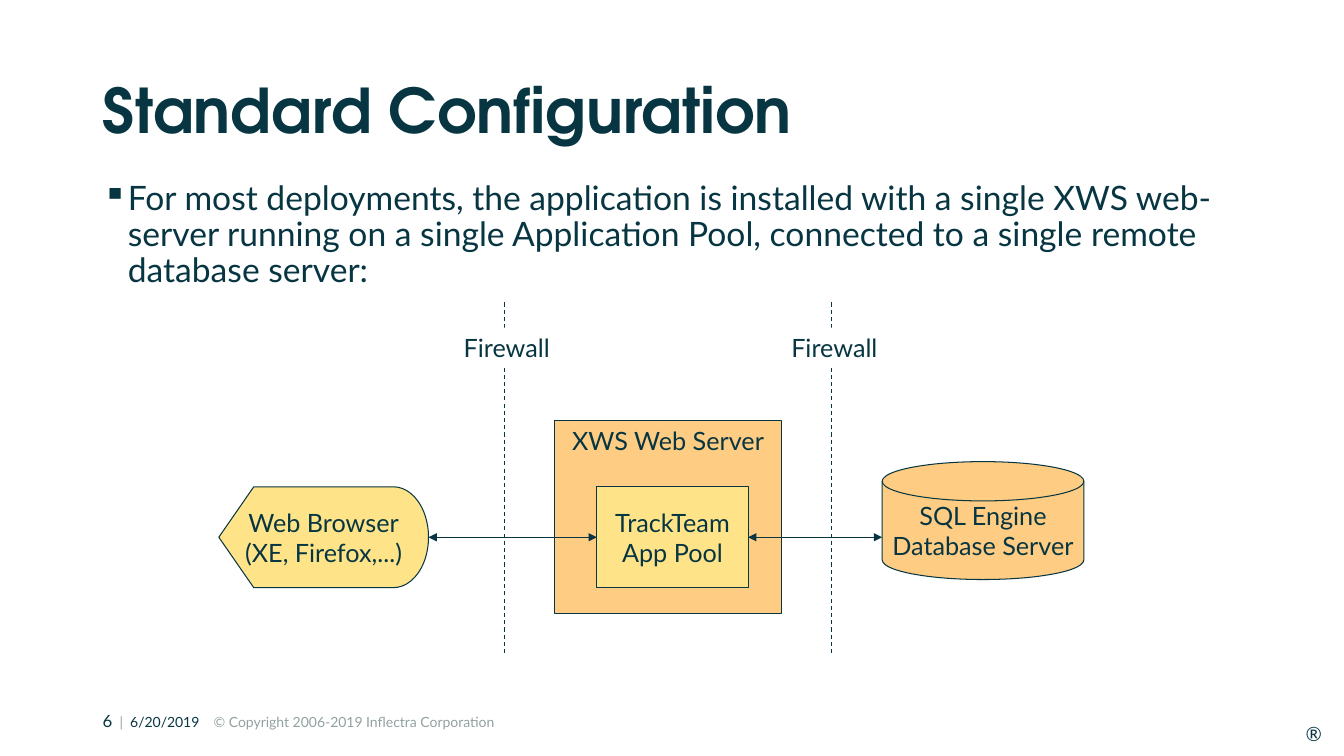
from dataclasses import dataclass
from typing import Any

from lxml import etree
from pptx import Presentation
from pptx.dml.color import RGBColor
from pptx.enum import dml, shapes, text
from pptx.oxml.ns import qn
from pptx.util import Inches, Pt

COLORS = {"ink": "073642", "grey": "93A1A1", "orange": "FECC82",
          "yellow": "FFE389", "white": "FFFFFF"}
BODY_FONT, TITLE_FONT = "Lato", "TeX Gyre Adventor"
SHAPE = shapes.MSO_SHAPE
ANCHOR, ALIGN = text.MSO_ANCHOR, text.PP_ALIGN
FLOW_Y = 5.33


@dataclass
class Node:
    kind: Any
    box: tuple[float, float, float, float]
    fill: str
    lines: list[str]
    anchor: Any = ANCHOR.MIDDLE


@dataclass
class Line:
    start: tuple[float, float]
    end: tuple[float, float]
    dashed: bool = False


NODES = [
    Node(SHAPE.FLOWCHART_MAGNETIC_DISK, (8.75, 4.58, 2, 1.17), "orange",
         ["SQL Engine", "Database Server"]),
    Node(SHAPE.FLOWCHART_PROCESS, (5.5, 4.17, 2.25, 1.92), "orange",
         ["XWS Web Server"], ANCHOR.TOP),
    Node(SHAPE.RECTANGLE, (5.92, 4.83, 1.5, 1), "yellow", ["TrackTeam", "App Pool"]),
    Node(SHAPE.FLOWCHART_DISPLAY, (2.17, 4.83, 2.08, 1), "yellow",
         ["Web Browser", "(XE, Firefox,...)"]),
]
# x of each dashed line, x of its label
FIREWALLS = [(8.25, 7.75), (5, 4.5)]
ARROWS = [Line((4.25, FLOW_Y), (5.92, FLOW_Y)), Line((7.42, FLOW_Y), (8.75, FLOW_Y))]


def set_all(target: Any, values: dict[str, Any]) -> None:
    for name, value in values.items():
        setattr(target, name, value)


def rgb(name: str) -> RGBColor:
    return RGBColor.from_string(COLORS[name])


def inches(box: tuple[float, ...]) -> list[int]:
    return [Inches(v) for v in box]


def add_run(p: Any, words: str, size: float, color: str = "ink",
            font: str = BODY_FONT, bold: bool = False) -> None:
    r = p.add_run()
    r.text = words
    set_all(r.font, {"name": font, "size": Pt(size), "bold": bold})
    r.font.color.rgb = rgb(color)


def add_text_box(s: Any, box: tuple[float, ...], margins: bool = True) -> Any:
    tf = s.shapes.add_textbox(*inches(box)).text_frame
    tf.word_wrap = True
    if not margins:
        set_all(tf, dict.fromkeys(
            ("margin_left", "margin_right", "margin_top", "margin_bottom"), 0))
    return tf.paragraphs[0]


def add_title(s: Any, words: str) -> None:
    sp = s.shapes.title
    set_all(sp, dict(zip(("left", "top", "width", "height"),
                         inches((0.92, 0.4, 11.5, 1.45)))))
    set_all(sp.text_frame, {"vertical_anchor": ANCHOR.MIDDLE, "word_wrap": True})
    p = sp.text_frame.paragraphs[0]
    set_all(p, {"alignment": ALIGN.LEFT, "line_spacing": 0.9})
    add_run(p, words, 44, font=TITLE_FONT, bold=True)


def add_bullet(s: Any, words: str) -> None:
    p = add_text_box(s, (0.92, 1.75, 11.5, 5.01))
    p.line_spacing = 0.9
    pPr = p._p.get_or_add_pPr()
    pPr.set("marL", str(Inches(0.25)))
    pPr.set("indent", str(Inches(-0.25)))
    etree.SubElement(pPr, qn("a:buChar"), char="▪")
    add_run(p, words, 24)


def add_node(s: Any, node: Node) -> None:
    sp = s.shapes.add_shape(node.kind, *inches(node.box))
    sp.shadow.inherit = False
    sp.fill.solid()
    sp.fill.fore_color.rgb = rgb(node.fill)
    sp.line.color.rgb = rgb("ink")
    sp.line.width = Pt(0.75)
    tf = sp.text_frame
    set_all(tf, {"vertical_anchor": node.anchor, "word_wrap": False})
    for i, words in enumerate(node.lines):
        p = tf.add_paragraph() if i else tf.paragraphs[0]
        p.alignment = ALIGN.CENTER
        add_run(p, words, 18)


def add_line(s: Any, line: Line) -> None:
    """Draw a dashed line, or a solid one with an arrowhead at each end."""
    cx = s.shapes.add_connector(shapes.MSO_CONNECTOR.STRAIGHT,
                                *inches(line.start + line.end))
    cx.line.color.rgb = rgb("ink")
    cx.line.width = Pt(0.75)
    if line.dashed:
        cx.line.dash_style = dml.MSO_LINE.DASH
    else:
        for tag in ("a:headEnd", "a:tailEnd"):
            etree.SubElement(cx.line._get_or_add_ln(), qn(tag), type="triangle")
    etree.SubElement(cx._element.spPr, qn("a:effectLst"))


def add_firewall(s: Any, x: float, label_x: float) -> None:
    add_line(s, Line((x, 3), (x, 6.5), dashed=True))
    sp = s.shapes.add_shape(SHAPE.RECTANGLE, *inches((label_x, 3.25, 1.42, 0.4)))
    sp.shadow.inherit = False
    sp.fill.solid()
    sp.fill.fore_color.rgb = rgb("white")
    sp.line.fill.background()
    set_all(sp.text_frame, {"vertical_anchor": ANCHOR.TOP, "word_wrap": True})
    p = sp.text_frame.paragraphs[0]
    p.alignment = ALIGN.LEFT
    add_run(p, "Firewall", 18)


def add_footer(s: Any) -> None:
    p = add_text_box(s, (0.92, 7, 7.47, 0.3))
    for words, size, color in [
            ("6", 12, "ink"), ("  |  ", 10, "grey"), ("6/20/2019  ", 10, "ink"),
            ("  © Copyright 2006-2019 Inflectra Corporation", 10, "grey")]:
        add_run(p, words, size, color)
    add_run(add_text_box(s, (12.95, 7.16, 0.18, 0.24), margins=False), "®", 14)


def main() -> None:
    prs = Presentation()
    set_all(prs, {"slide_width": Inches(13.33), "slide_height": Inches(7.5)})
    s = prs.slides.add_slide(prs.slide_layouts[5])
    add_footer(s)
    add_title(s, "Standard Configuration")
    add_bullet(s, "For most deployments, the application is installed with a single "
                  "XWS web-server running on a single Application Pool, connected to "
                  "a single remote database server:")
    for node in NODES:
        add_node(s, node)
    for x, label_x in FIREWALLS:
        add_firewall(s, x, label_x)
    for arrow in ARROWS:
        add_line(s, arrow)
    prs.save("out.pptx")


if __name__ == "__main__":
    main()
